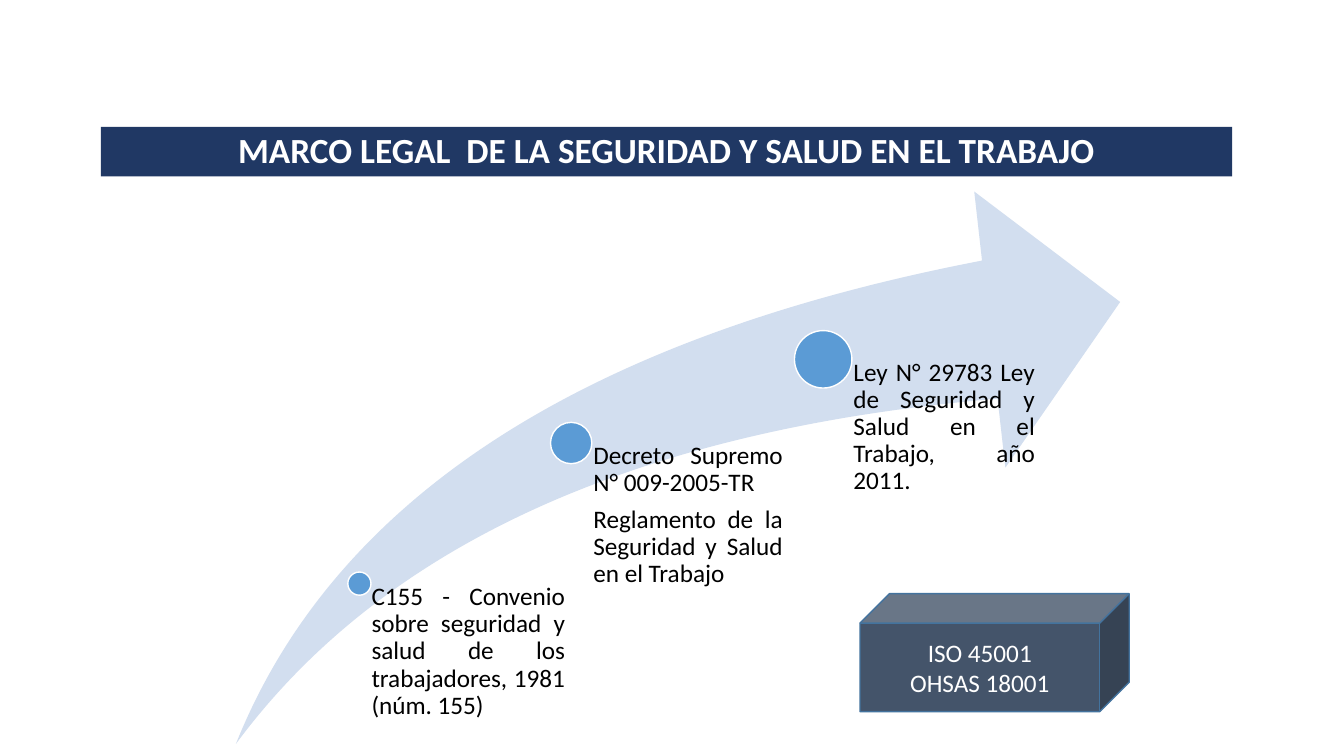
from pptx import Presentation
from pptx.dml.color import RGBColor
from pptx.enum.shapes import MSO_SHAPE
from pptx.enum.text import MSO_ANCHOR, PP_ALIGN
from pptx.util import Inches, Pt

NAVY = RGBColor(0x20, 0x38, 0x64)
PALE_BLUE = RGBColor(0xD2, 0xDE, 0xEF)
BLUE = RGBColor(0x5B, 0x9B, 0xD5)
SLATE = RGBColor(0x44, 0x54, 0x6A)
EDGE_BLUE = RGBColor(0x43, 0x73, 0x9E)
WHITE = RGBColor(0xFF, 0xFF, 0xFF)
BLACK = RGBColor(0x00, 0x00, 0x00)

MILESTONES = [
    (3.565, 5.79, 0.23, 2.04, 0.12,
     ["C155 - Convenio sobre seguridad y salud de los trabajadores, 1981 (núm. 155)"]),
    (5.665, 4.395, 0.41, 2.1, 0.22,
     ["Decreto Supremo N° 009-2005-TR",
      "Reglamento de la Seguridad y Salud en el Trabajo"]),
    (8.165, 3.565, 0.57, 2.1, 0.3,
     ["Ley N° 29783 Ley de Seguridad y Salud en el Trabajo, año 2011."]),
]
ARROW_BOTTOM = 7.38


def add_filled_shape(slide, preset, left, top, width, height, fill, line=None):
    """Add a preset shape with a solid fill and an optional outline."""
    shape = slide.shapes.add_shape(
        preset, Inches(left), Inches(top), Inches(width), Inches(height))
    shape.shadow.inherit = False
    shape.fill.solid()
    shape.fill.fore_color.rgb = fill
    if line is None:
        shape.line.fill.background()
    else:
        shape.line.color.rgb = line
        shape.line.width = Pt(1)
    return shape


def write_paragraphs(frame, texts, align, color, size=18, bold=False,
                     line_spacing=1.0, space_after=0):
    """Fill a text frame with uniformly styled paragraphs."""
    frame.word_wrap = True
    for index, text in enumerate(texts):
        paragraph = frame.paragraphs[0] if index == 0 else frame.add_paragraph()
        paragraph.text = text
        paragraph.alignment = align
        paragraph.line_spacing = line_spacing
        paragraph.space_after = Pt(space_after)
        paragraph.font.name = "Calibri"
        paragraph.font.size = Pt(size)
        paragraph.font.bold = bold
        paragraph.font.color.rgb = color


def add_title(slide, title):
    """Add the title banner."""
    banner = add_filled_shape(slide, MSO_SHAPE.RECTANGLE, 1, 1.26, 11.22, 0.49, NAVY)
    banner.text_frame.vertical_anchor = MSO_ANCHOR.MIDDLE
    write_paragraphs(banner.text_frame, [title], PP_ALIGN.CENTER, WHITE,
                     size=25.2, bold=True, line_spacing=0.9)


def add_milestone(slide, center_x, center_y, diameter, width, indent, texts):
    """Add a dot on the arrow and the text that starts at its centre."""
    add_filled_shape(slide, MSO_SHAPE.OVAL, center_x - diameter / 2,
                     center_y - diameter / 2, diameter, diameter, BLUE, WHITE)
    label = slide.shapes.add_textbox(
        Inches(center_x), Inches(center_y),
        Inches(width), Inches(ARROW_BOTTOM - center_y))
    frame = label.text_frame
    frame.margin_left = Inches(indent)
    frame.margin_top = frame.margin_right = frame.margin_bottom = Inches(0)
    write_paragraphs(frame, texts, PP_ALIGN.JUSTIFY, BLACK,
                     line_spacing=0.9, space_after=6.3)


def add_standards_block(slide, standards):
    """Add the cube that names the standards."""
    cube = add_filled_shape(slide, MSO_SHAPE.CUBE, 8.53, 5.89, 2.67, 1.17,
                            SLATE, EDGE_BLUE)
    cube.text_frame.vertical_anchor = MSO_ANCHOR.MIDDLE
    write_paragraphs(cube.text_frame, standards, PP_ALIGN.CENTER, WHITE)


def main():
    """Build the legal framework slide."""
    presentation = Presentation()
    presentation.slide_width = Inches(13.33)
    presentation.slide_height = Inches(7.5)
    slide = presentation.slides.add_slide(presentation.slide_layouts[6])

    add_title(slide, "MARCO LEGAL  DE LA SEGURIDAD Y SALUD EN EL TRABAJO")
    arrow = add_filled_shape(slide, MSO_SHAPE.SWOOSH_ARROW, 2.34, 1.9, 8.77,
                             ARROW_BOTTOM - 1.9, PALE_BLUE)
    arrow.adjustments[0] = 0.25
    arrow.adjustments[1] = 0.25
    for milestone in MILESTONES:
        add_milestone(slide, *milestone)
    add_standards_block(slide, ["ISO 45001", "OHSAS 18001"])
    presentation.save("out.pptx")


if __name__ == "__main__":
    main()
